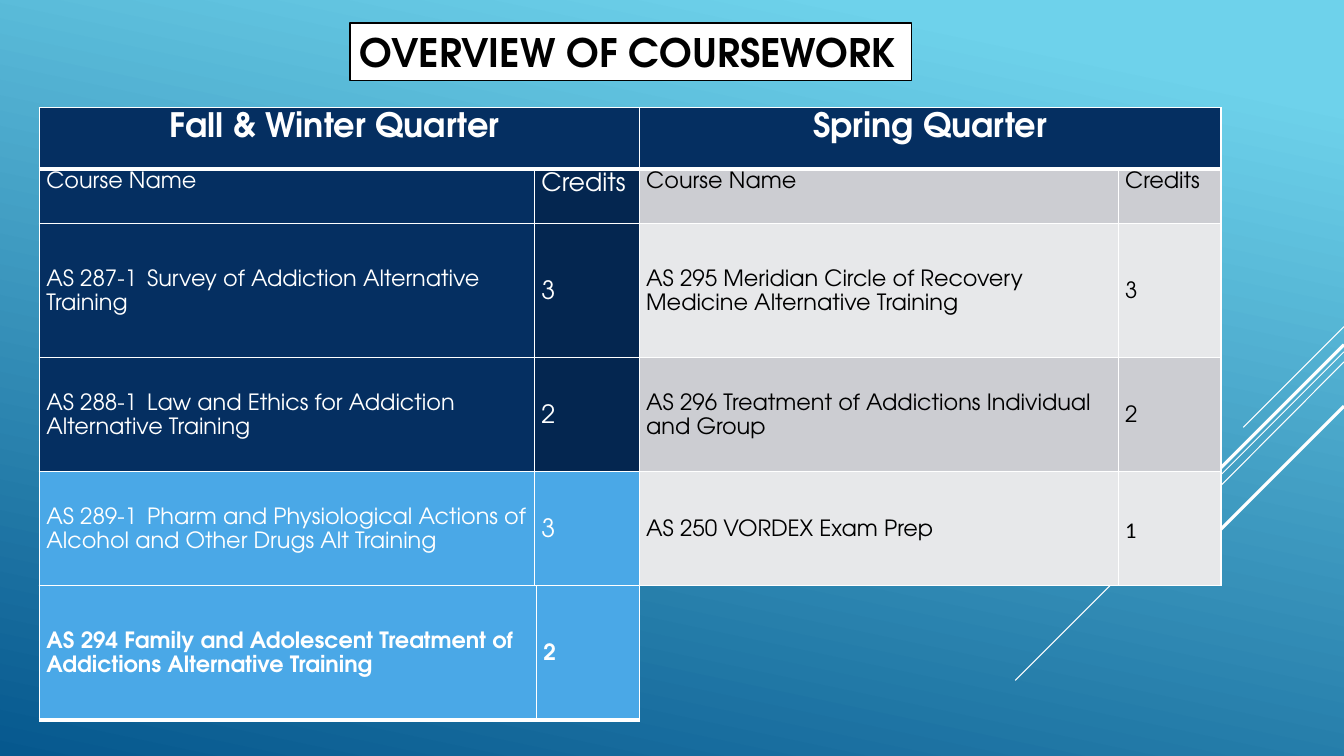
from lxml.etree import SubElement as Sub
from pptx import Presentation
from pptx.dml.color import RGBColor as RGB
from pptx.enum.shapes import MSO_CONNECTOR as Conn
from pptx.enum.text import MSO_ANCHOR as Anchor, MSO_AUTO_SIZE as Auto, PP_ALIGN as Align
from pptx.oxml import parse_xml
from pptx.oxml.ns import nsdecls, qn
from pptx.util import Inches, Pt

WHITE = RGB(0xFF, 0xFF, 0xFF)
BLACK = RGB(0, 0, 0)
AQUA = RGB(0x6E, 0xD2, 0xEB)
OCEAN = RGB(0x06, 0x58, 0x8E)
NAVY = RGB(0x05, 0x2F, 0x61)
DEEP = RGB(0x04, 0x26, 0x50)
SKY = RGB(0x4A, 0xA8, 0xE7)
GREY = RGB(0xCC, 0xCD, 0xD2)
PALE = RGB(0xE7, 0xE8, 0xEA)
FONT = "TeX Gyre Adventor"

RAYS = [
    ((13.33, 3.24), (12.33, 4.24), 0.75),
    ((13.33, 3.49), (10.07, 6.75), 0.75),
    ((13.33, 3.59), (11.26, 5.67), 0.75),
    ((13.33, 3.42), (11.42, 5.33), 2.25),
    ((13.33, 4.03), (11.94, 5.42), 2.25),
]
HEADS = ["Fall & Winter Quarter ", "Spring Quarter"]
ROWS = [
    ["Course Name", "Credits", "Course Name", "Credits"],
    ["AS 287-1\tSurvey of Addiction Alternative Training", "3",
     "AS 295 Meridian Circle of Recovery Medicine Alternative Training", "3"],
    ["AS 288-1\tLaw and Ethics for Addiction Alternative Training", "2",
     "AS 296 Treatment of Addictions Individual and Group", "2"],
    ["AS 289-1\tPharm and Physiological Actions of Alcohol and Other Drugs Alt Training",
     "3", "AS 250 VORDEX Exam Prep", "1"],
]
FILLS = [
    [NAVY, DEEP, GREY, GREY],
    [NAVY, DEEP, PALE, PALE],
    [NAVY, DEEP, GREY, GREY],
    [SKY, SKY, PALE, PALE],
]
EXTRA = ["AS 294 Family and Adolescent Treatment of Addictions Alternative Training", "2"]


def style(item, form):
    for name, value in form.items():
        setattr(item, name, value)


def write(para, text, color, **form):
    run = para.add_run()
    run.text = text
    style(run.font, {"name": FONT, "size": Pt(16), "bold": False, **form})
    run.font.color.rgb = color


def paint(slide):
    fill = slide.background.fill
    fill.gradient()
    fill.gradient_angle = 258
    for stop, color, spot in zip(fill.gradient_stops, (AQUA, OCEAN), (0.1, 1)):
        stop.color.rgb = color
        stop.position = spot


def add_ray(slide, start, end, width):
    ends = [Inches(n) for n in start + end]
    ray = slide.shapes.add_connector(Conn.STRAIGHT, *ends)
    ray.line.color.rgb = WHITE
    ray.line.width = Pt(width)
    Sub(ray._element.spPr, qn("a:effectLst"))


def set_title(slide, text):
    title = slide.shapes.title
    style(title, {"left": Inches(3.47), "top": Inches(0.23),
                  "width": Inches(5.57), "height": Inches(0.57)})
    title.fill.solid()
    title.fill.fore_color.rgb = WHITE
    title.line.color.rgb = BLACK
    title.line.width = Pt(1.25)
    style(title.text_frame, {"word_wrap": True, "vertical_anchor": Anchor.TOP,
                             "auto_size": Auto.NONE})
    para = title.text_frame.paragraphs[0]
    para.alignment = Align.LEFT
    write(para, text, BLACK, size=Pt(28), bold=True)


def edge(cell, top=1, base=1):
    props = cell._tc.get_or_add_tcPr()
    for i, (side, width) in enumerate(zip("LRTB", (1, 1, top, base))):
        props.insert(i, parse_xml(
            f'<a:ln{side} {nsdecls("a")} w="{Pt(width)}"><a:solidFill>'
            f'<a:srgbClr val="{WHITE}"/></a:solidFill></a:ln{side}>'))


def set_cell(cell, text, fill, color=WHITE, anchor=Anchor.MIDDLE,
             align=Align.LEFT, **form):
    style(cell, {"margin_left": Inches(0.07), "margin_right": Inches(0.07),
                 "margin_top": 0, "margin_bottom": 0, "vertical_anchor": anchor})
    cell.fill.solid()
    cell.fill.fore_color.rgb = fill
    para = cell.text_frame.paragraphs[0]
    style(para, {"alignment": align, "line_spacing": 1.15})
    write(para, text, color, **form)


def add_grid(slide, top, cols, rows):
    frame = slide.shapes.add_table(
        len(rows), len(cols), Inches(0.39), Inches(top),
        Inches(sum(cols)), Inches(sum(rows)))
    grid = frame.table
    style(grid, {"first_row": False, "horz_banding": False})
    for col, width in zip(grid.columns, cols):
        col.width = Inches(width)
    for row, height in zip(grid.rows, rows):
        row.height = Inches(height)
    return grid


def add_plan(slide):
    grid = add_grid(slide, 1.07, [4.91, 1.04, 4.75, 1.02], [0.61, 0.54, 1.33, 1.13, 1.13])
    for i, head in enumerate(HEADS):
        first, last = grid.cell(0, 2 * i), grid.cell(0, 2 * i + 1)
        first.merge(last)
        set_cell(first, head, NAVY, anchor=Anchor.TOP, align=Align.CENTER,
                 size=Pt(24), bold=True)
        edge(first, base=3)
        edge(last, base=3)
    for r, (texts, fills) in enumerate(zip(ROWS, FILLS), 1):
        for c, (text, fill) in enumerate(zip(texts, fills)):
            cell = grid.cell(r, c)
            set_cell(cell, text, fill, WHITE if c < 2 else BLACK,
                     Anchor.TOP if r == 1 else Anchor.MIDDLE,
                     size=Pt(18 if c == 1 else 16),
                     name="Calibri" if text == "1" else FONT)
            edge(cell, top=3 if r == 1 else 1)


def add_extra(slide):
    grid = add_grid(slide, 5.81, [4.93, 1.02], [1.33])
    for cell, text in zip(grid.rows[0].cells, EXTRA):
        set_cell(cell, text, SKY, bold=True)
        edge(cell, base=3)


def main():
    deck = Presentation()
    style(deck, {"slide_width": Inches(13.33), "slide_height": Inches(7.5)})
    slide = deck.slides.add_slide(deck.slide_layouts[5])
    paint(slide)
    for ray in RAYS:
        add_ray(slide, *ray)
    add_plan(slide)
    set_title(slide, "OVERVIEW OF COURSEWORK")
    add_extra(slide)
    deck.save("out.pptx")


if __name__ == "__main__":
    main()
